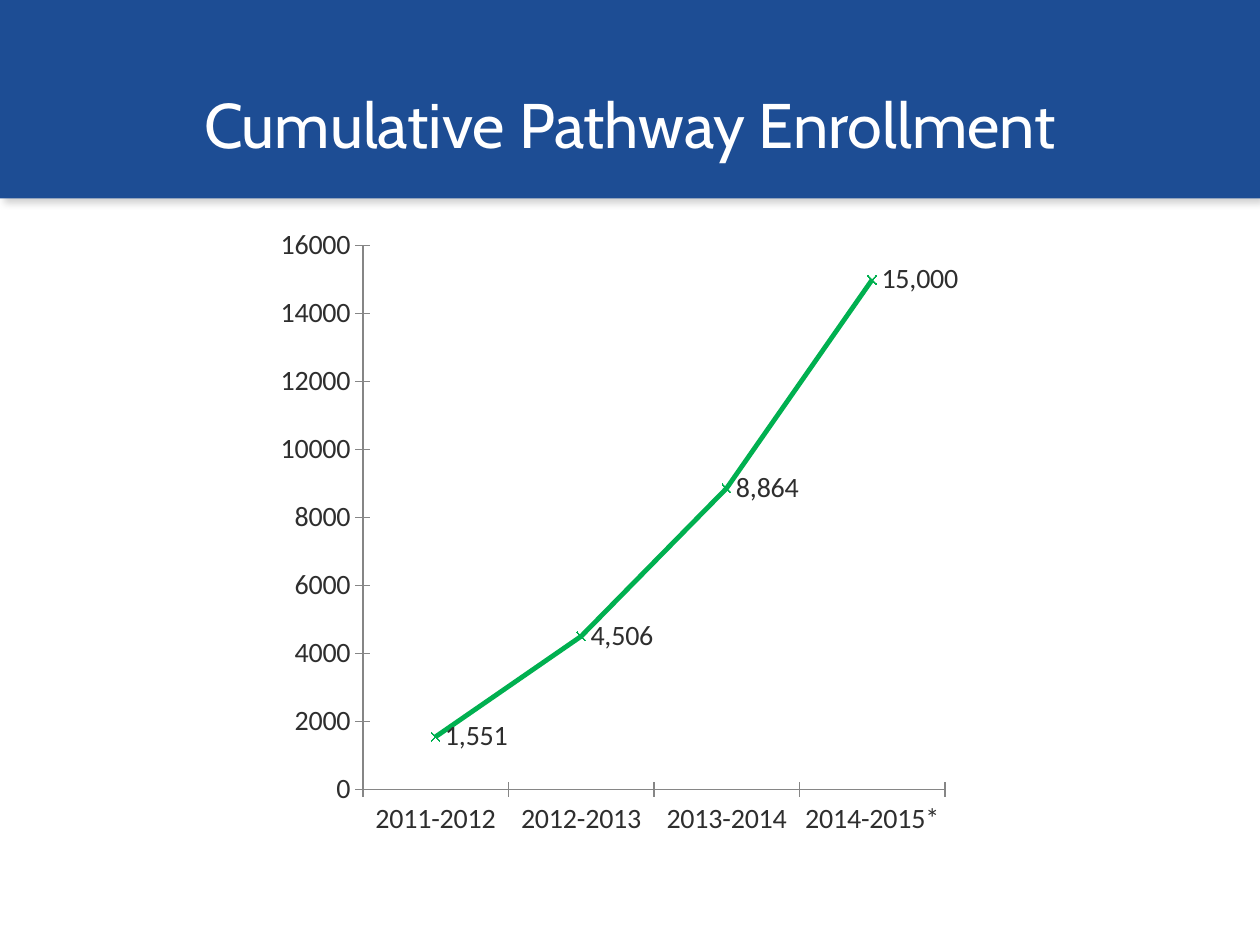
import pptx
import pptx.chart.data
import pptx.dml.color
import pptx.enum.chart
import pptx.enum.shapes
import pptx.enum.text
import pptx.oxml
import pptx.oxml.ns
import pptx.util

COLORS = {"band": "1D4D94", "title": "FFFFFF", "text": "2E2E2E",
          "line": "00B050", "axis": "868686"}
FONTS = {"title": "Cabin", "chart": "Calibri"}
WIDTH, HEIGHT = 10, 7.5
ENROLLMENT = {"2011-2012": 1551, "2012-2013": 4506,
              "2013-2014": 8864, "2014-2015*": 15000}


def rgb(name):
    return pptx.dml.color.RGBColor.from_string(COLORS[name])


def set_all(target, **values):
    for name, value in values.items():
        setattr(target, name, value)


class Deck:
    """Holds the presentation, its style and the current slide."""

    def __init__(self):
        self.prs = pptx.Presentation()
        self.prs.slide_width = pptx.util.Inches(WIDTH)
        self.prs.slide_height = pptx.util.Inches(HEIGHT)
        self.s = self.prs.slides.add_slide(self.prs.slide_layouts[6])

    def box(self, x, y, w, h):
        """Turn shares of the slide's size into lengths."""
        sw, sh = self.prs.slide_width, self.prs.slide_height
        return round(x * sw), round(y * sh), round(w * sw), round(h * sh)

    def font(self, font, size, color, face):
        set_all(font, size=pptx.util.Pt(size), name=FONTS[face], bold=False)
        font.color.rgb = rgb(color)

    def band(self, *area):
        sp = self.s.shapes.add_shape(
            pptx.enum.shapes.MSO_SHAPE.RECTANGLE, *self.box(*area))
        sp.fill.solid()
        sp.fill.fore_color.rgb = rgb("band")
        sp.line.fill.background()
        sp.shadow.inherit = False
        effects = sp._element.spPr.find(pptx.oxml.ns.qn("a:effectLst"))
        effects.append(pptx.oxml.parse_xml(
            f'<a:outerShdw {pptx.oxml.ns.nsdecls("a")} blurRad="57150" '
            'dist="38100" dir="2700000" algn="tl" rotWithShape="0">'
            '<a:srgbClr val="000000"><a:alpha val="18000"/></a:srgbClr>'
            '</a:outerShdw>'))

    def title(self, text, *area):
        tf = self.s.shapes.add_textbox(*self.box(*area)).text_frame
        set_all(tf, word_wrap=True,
                vertical_anchor=pptx.enum.text.MSO_ANCHOR.BOTTOM)
        p = tf.paragraphs[0]
        p.alignment = pptx.enum.text.PP_ALIGN.CENTER
        r = p.add_run()
        r.text = text
        self.font(r.font, 36, "title", "title")

    def line_chart(self, values, plot, *area):
        data = pptx.chart.data.CategoryChartData()
        data.categories = list(values)
        data.add_series("Series 1", list(values.values()))
        chart = self.s.shapes.add_chart(
            pptx.enum.chart.XL_CHART_TYPE.LINE_MARKERS,
            *self.box(*area), data).chart
        set_all(chart, has_legend=False, has_title=False)
        self.font(chart.font, 10, "text", "chart")
        chart.plots[0].vary_by_categories = False
        for axis in (chart.category_axis, chart.value_axis):
            self.axis(axis)
        set_all(chart.value_axis, minimum_scale=0, maximum_scale=16000,
                major_unit=2000)
        self.series(chart.plots[0].series[0])
        self.place_plot(chart, plot)

    def axis(self, axis):
        set_all(axis, has_major_gridlines=False,
                major_tick_mark=pptx.enum.chart.XL_TICK_MARK.CROSS)
        set_all(axis.tick_labels, number_format="General",
                number_format_is_linked=False)
        self.font(axis.tick_labels.font, 16, "text", "chart")
        axis.format.line.color.rgb = rgb("axis")

    def series(self, series):
        series.smooth = False
        set_all(series.marker, size=5,
                style=pptx.enum.chart.XL_MARKER_STYLE.X)
        series.marker.format.fill.solid()
        series.marker.format.fill.fore_color.rgb = rgb("line")
        for line, width in ((series.format.line, 2.75),
                            (series.marker.format.line, 0.75)):
            line.color.rgb = rgb("line")
            line.width = pptx.util.Pt(width)
        labels = series.data_labels
        set_all(labels, show_value=True, number_format="#,##0",
                number_format_is_linked=False,
                position=pptx.enum.chart.XL_LABEL_POSITION.RIGHT)
        self.font(labels.font, 16, "text", "chart")

    def place_plot(self, chart, plot):
        """Fix the inner plot area, given as shares of the chart's size."""
        area = chart._chartSpace.chart.plotArea
        for old in area.findall(pptx.oxml.ns.qn("c:layout")):
            area.remove(old)
        places = "".join(f'<c:{k} val="{v}"/>' for k, v in zip("xywh", plot))
        area.insert(0, pptx.oxml.parse_xml(
            f'<c:layout {pptx.oxml.ns.nsdecls("c")}><c:manualLayout>'
            '<c:layoutTarget val="inner"/><c:xMode val="edge"/>'
            f'<c:yMode val="edge"/>{places}</c:manualLayout></c:layout>'))


def main():
    deck = Deck()
    deck.band(0, 0, 1, 0.21)
    deck.title("Cumulative Pathway Enrollment", 0.05, 0.04, 0.9, 0.137)
    deck.line_chart(ENROLLMENT, (0.16, 0.04, 0.77, 0.85),
                    0.192, 0.233, 0.6, 0.677)
    deck.prs.save("out.pptx")


if __name__ == "__main__":
    main()
